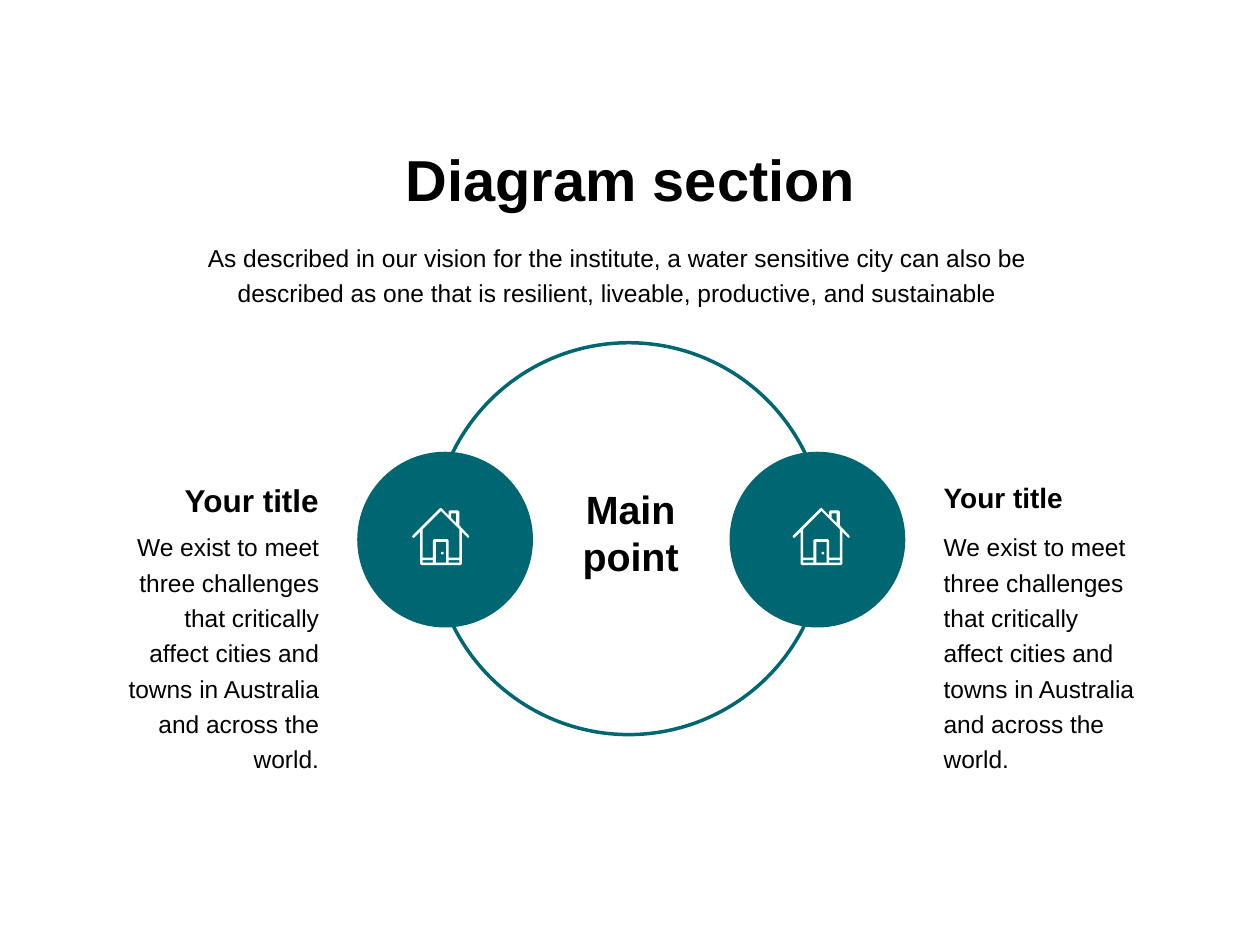
"""Build a slide with a ring diagram joining two house discs to their texts."""
from pptx import Presentation
from pptx.dml.color import RGBColor
from pptx.enum.shapes import MSO_SHAPE as Preset
from pptx.enum.text import MSO_AUTO_SIZE as Fit, PP_ALIGN as Align
from pptx.util import Inches, Pt

COLUMNS, ROWS = 20, 15
COLORS = {"teal": "006772", "black": "000000", "white": "FFFFFF"}
SIDE_TEXT = ("We exist to meet three challenges that critically affect cities "
             "and towns in Australia and across the world.")
INTRO = ("As described in our vision for the institute, a water sensitive city can also be "
         "described as one that is resilient, liveable, productive, and sustainable")

HEADING = {"bold": True, "wrap": False, "spacing": None}
BODY = {"bold": False, "wrap": True, "spacing": 1.2, "size": 28}
TEXTS = [
    (["Diagram section"], (6.31, 2.24, 7.4, 1.21), Align.CENTER, HEADING | {"size": 66}),
    ([INTRO], (2.38, 3.71, 14.81, 1.22), Align.CENTER, BODY),
    (["Main", "point"], (9.14, 7.65, 1.74, 1.62), Align.CENTER, HEADING | {"size": 45}),
    (["Your title"], (2.79, 7.58, 2.37, 0.71), Align.RIGHT, HEADING | {"size": 36}),
    ([SIDE_TEXT], (1.87, 8.31, 3.29, 4.04), Align.RIGHT, BODY),
    (["Your title"], (14.88, 7.58, 2.13, 0.64), Align.LEFT, HEADING | {"size": 32}),
    ([SIDE_TEXT], (14.88, 8.31, 3.29, 4.04), Align.LEFT, BODY),
]

RING = (6.87, 5.44, 6.22)
DISC_LEFTS, DISC_TOP, DISC_SIZE = (5.67, 11.58), 7.17, 2.79
HOUSE_LEFTS, HOUSE_TOP = (6.54, 12.58), 8.06
HOUSE_UNITS = 100


def pane(left, top, right, bottom):
    """Return the corners of a rectangular opening."""
    return [(left, top), (right, top), (right, bottom), (left, bottom)]


HOUSE = [
    [(90, 44), (75, 28), (75, 6), (73, 4), (60, 4), (58, 6), (58, 12), (47, 1),
     (46, 0), (44, 1), (1, 44), (0, 46), (2, 48), (4, 47), (13, 38), (13, 89),
     (15, 91), (77, 91), (79, 89), (79, 38), (88, 47), (89, 48), (91, 46)],
    [(75, 79), (58, 79), (58, 52), (56, 50), (35, 50), (33, 52), (33, 79),
     (17, 79), (17, 34), (46, 5), (75, 34)],
    [(62, 9), (70, 9), (70, 24), (62, 16)],
    pane(58, 83, 75, 87),
    pane(38, 54, 54, 87),
    pane(17, 83, 33, 87),
    [(47, 70), (49, 70), (50, 71), (50, 73), (49, 74), (47, 74), (46, 73), (46, 71)],
]


def color(name):
    return RGBColor.from_string(COLORS[name])


def paint(shape, fill=None, line=None, weight=0):
    shape.shadow.inherit = False
    if fill:
        shape.fill.solid()
        shape.fill.fore_color.rgb = color(fill)
    else:
        shape.fill.background()
    if line:
        shape.line.color.rgb = color(line)
        shape.line.width = Pt(weight)
    else:
        shape.line.fill.background()


def add_circle(page, left, top, size, **style):
    place = [Inches(value) for value in (left, top, size, size)]
    paint(page.shapes.add_shape(Preset.OVAL, *place), **style)


def add_house(page, left, top):
    outline, *openings = HOUSE
    builder = page.shapes.build_freeform(*outline[0], scale=Inches(1) / HOUSE_UNITS)
    builder.add_line_segments(outline[1:], close=True)
    for opening in openings:
        builder.move_to(*opening[0])
        builder.add_line_segments(opening[1:], close=True)
    paint(builder.convert_to_shape(Inches(left), Inches(top)), fill="white")


def add_text(page, lines, place, align, style):
    box = page.shapes.add_textbox(*[Inches(value) for value in place])
    frame = box.text_frame
    frame.word_wrap = style["wrap"]
    frame.auto_size = Fit.SHAPE_TO_FIT_TEXT
    frame.text = "\n".join(lines)
    font_format = {"name": "Arial", "size": Pt(style["size"]), "bold": style["bold"]}
    for para in frame.paragraphs:
        para.alignment = align
        para.line_spacing = style["spacing"]
        for span in para.runs:
            span.font.color.rgb = color("black")
            for name, value in font_format.items():
                setattr(span.font, name, value)


def main():
    deck = Presentation()
    deck.slide_width, deck.slide_height = Inches(COLUMNS), Inches(ROWS)
    page = deck.slides.add_slide(deck.slide_layouts[6])
    add_circle(page, *RING, line="teal", weight=4)
    for left in DISC_LEFTS:
        add_circle(page, left, DISC_TOP, DISC_SIZE, fill="teal")
    for text in TEXTS:
        add_text(page, *text)
    for left in HOUSE_LEFTS:
        add_house(page, left, HOUSE_TOP)
    deck.save("out.pptx")


if __name__ == "__main__":
    main()
